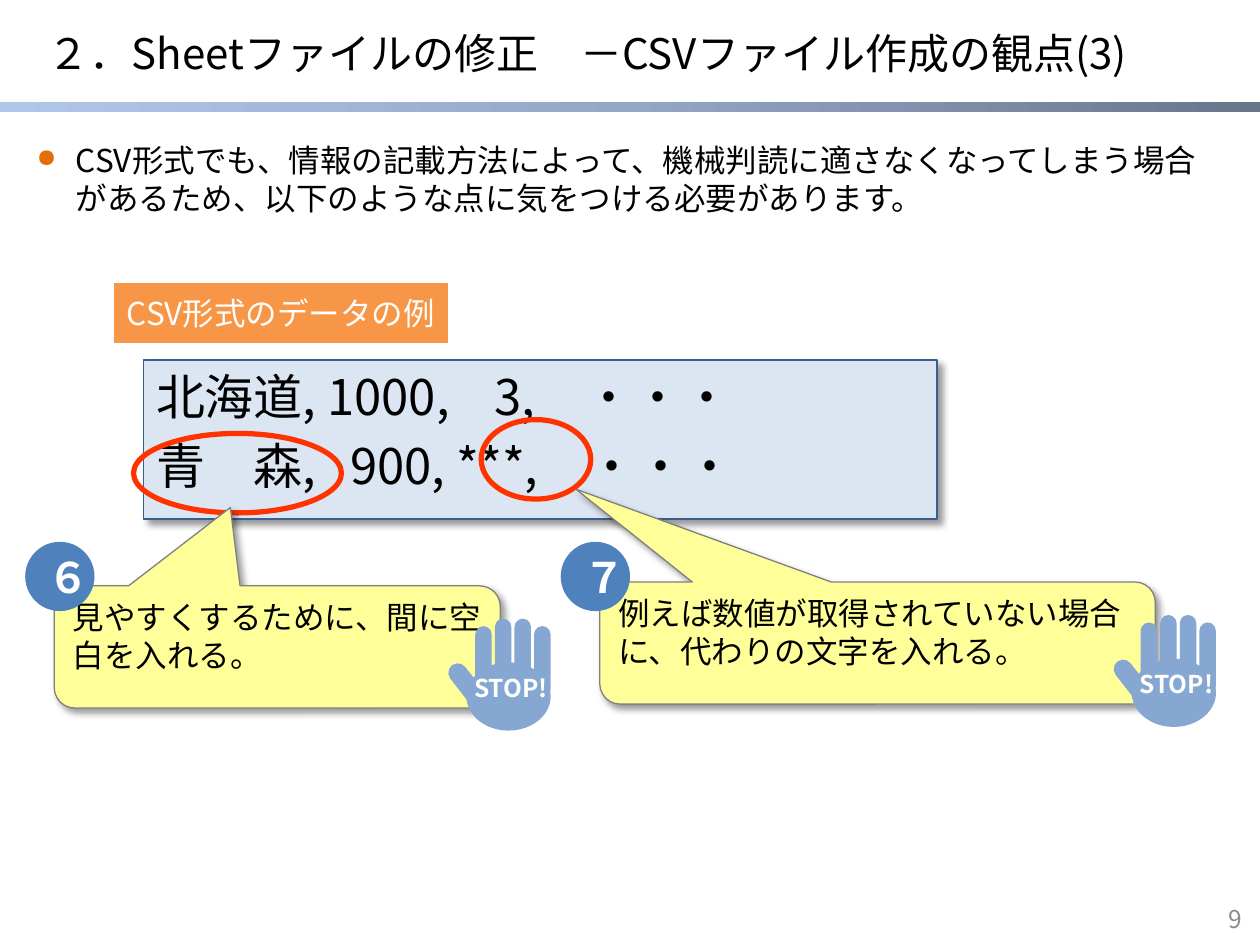
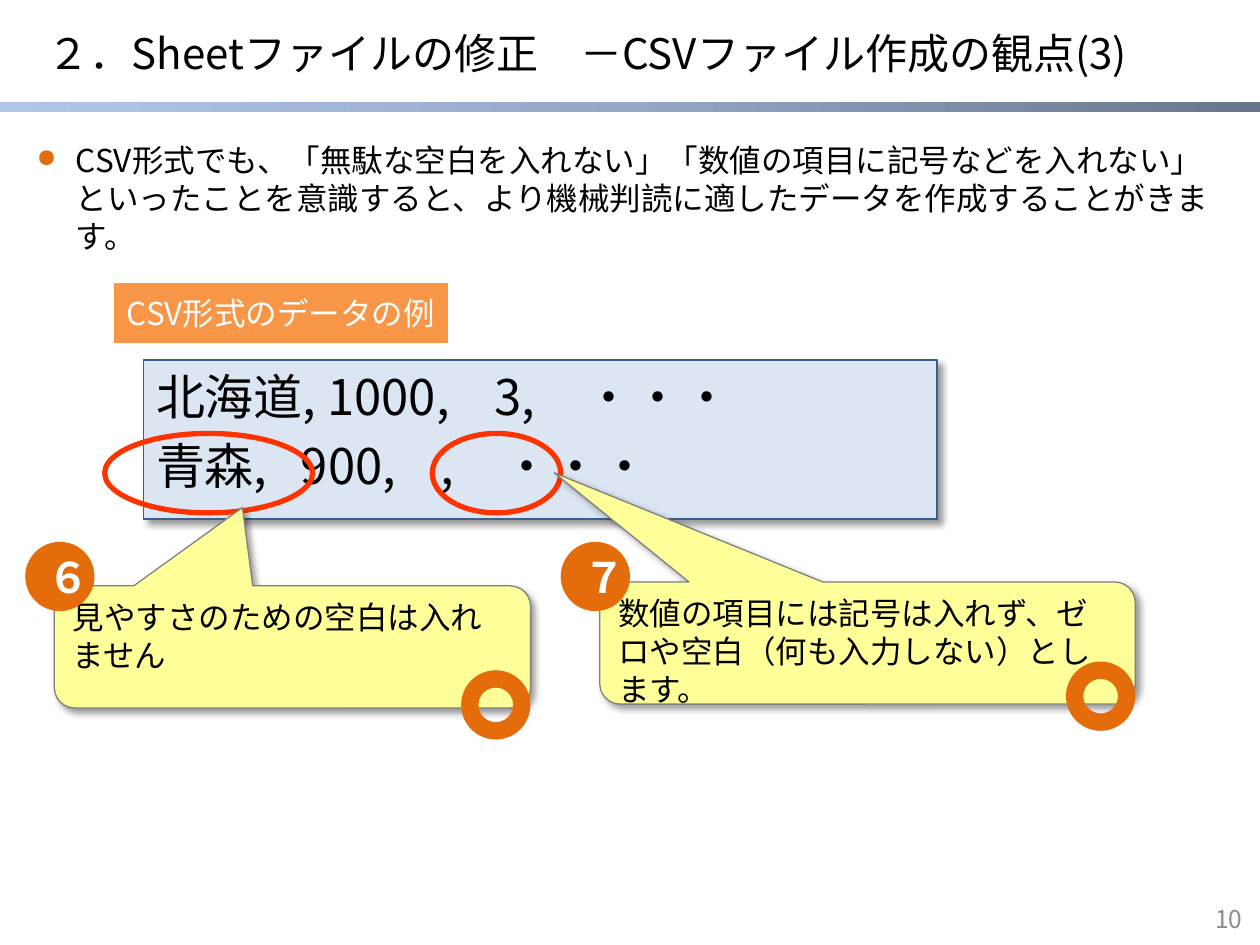
from lxml import etree
from pptx import Presentation
from pptx.dml.color import RGBColor
from pptx.enum import shapes as es, text as et
from pptx.oxml import ns
from pptx.util import Pt

FONT = "Noto Sans CJK JP"
KIND = es.MSO_SHAPE
ALIGN = et.PP_ALIGN
MIDDLE = et.MSO_ANCHOR.MIDDLE
TOP = et.MSO_ANCHOR.TOP
BLACK, WHITE, GREY = "000000", "FFFFFF", "8C8C8C"
ORANGE, BLUE, PALM = "E46C0A", "4F81BD", "85A7D1"
BAND = [("69758B", 0), ("95A7C6", 50), ("B1C6EB", 100)]
TITLE = "２．Sheetファイルの修正　－CSVファイル作成の観点(3)"
LABEL = "CSV形式のデータの例"
FIRST = ("北海道, 1000,\t3,　・・・", [193.5])
BADGES = [("６", 14.4), ("７", 320.4)]

SLIDES = [
    {
        "page": "9",
        "lead": "CSV形式でも、情報の記載方法によって、機械判読に適さなくなってしまう場合があるため、以下のような点に気をつける必要があります。",
        "lead_width": 686,
        "second": ("青　森,\t900, ***,　・・・", [111]),
        "rings": [(76.3, 247.7, 118.8, 45.4), (275, 239.8, 62.6, 45.4)],
        "notes": [
            ("見やすくするために、間に空白を入れる。",
             (31, 334.8, 254.9, 69.8), (-0.105, -1.142)),
            ("例えば数値が取得されていない場合に、代わりの文字を入れる。",
             (342.7, 332.6, 317.5, 69.8), (-0.543, -1.26)),
        ],
        "badge": BLUE,
        "hands": [(263.5, 353.5), (643.7, 351.4)],
        "donuts": [],
    },
    {
        "page": "10",
        "lead": "CSV形式でも、「無駄な空白を入れない」「数値の項目に記号などを入れない」 といったことを意識すると、より機械判読に適したデータを作成することがきます。",
        "lead_width": 697.7,
        "second": ("青森,\t900,\t,　・・・", [82.8, 162.5]),
        "rings": [(59.8, 247.7, 118.8, 45.4), (247, 247.7, 73.4, 45.4)],
        "notes": [
            ("見やすさのための空白は入れません",
             (31, 334.8, 272.2, 69.8), (-0.105, -1.142)),
            ("数値の項目には記号は入れず、ゼロや空白（何も入力しない）とします。",
             (342.7, 332.6, 306, 69.8), (-0.585, -1.394)),
        ],
        "badge": ORANGE,
        "hands": [],
        "donuts": [(263.5, 383), (609.1, 378)],
    },
]


def color(code):
    """Turn a hex string into a colour."""
    return RGBColor.from_string(code)


def node(parent, tag, **attrs):
    """Append a drawing element to a parent."""
    return etree.SubElement(parent, ns.qn("a:" + tag), attrs)


def shape(home, kind, box, fill=None, line=None, width=1):
    """Add a flat preset shape."""
    item = home.shapes.add_shape(kind, *map(Pt, box))
    item.shadow.inherit = False
    if fill:
        item.fill.solid()
        item.fill.fore_color.rgb = color(fill)
    else:
        item.fill.background()
    if line:
        item.line.color.rgb = color(line)
        item.line.width = Pt(width)
    else:
        item.line.fill.background()
    return item


def shade(item):
    """Give a shape a soft shadow to the lower right."""
    effect = item._element.spPr.find(ns.qn("a:effectLst"))
    outer = node(effect, "outerShdw", blurRad=str(Pt(4)), dist=str(Pt(3)),
                 dir="2700000", algn="tl", rotWithShape="0")
    node(node(outer, "srgbClr", val=BLACK), "alpha", val="40000")


def write(item, words, size, ink=BLACK, align=ALIGN.LEFT, anchor=TOP,
          bold=False, wrap=True):
    """Set and format the text of a shape."""
    frame = item.text_frame
    frame.text = words
    frame.word_wrap = wrap
    frame.vertical_anchor = anchor
    for para in frame.paragraphs:
        para.alignment = align
        for run in para.runs:
            run.font.size = Pt(size)
            run.font.bold = bold
            run.font.color.rgb = color(ink)
            run.font.name = FONT
            node(run._r.get_or_add_rPr(), "ea", typeface=FONT)
    return frame


def label(home, box, words, size, **style):
    """Add a text box."""
    return write(home.shapes.add_textbox(*map(Pt, box)), words, size, **style)


def band(slide):
    """Draw the gradient rule under the title."""
    bar = shape(slide, KIND.RECTANGLE, (0, 58.3, 720, 5.8), BLUE)
    bar.fill.gradient()
    bar.fill.gradient_angle = 180
    stops = bar._element.spPr.find(".//" + ns.qn("a:gsLst"))
    for old in list(stops):
        stops.remove(old)
    for code, place in BAND:
        node(node(stops, "gs", pos=str(place * 1000)), "srgbClr", val=code)


def base(slide, page):
    """Draw the band, title and page number."""
    band(slide)
    frame = label(slide, (20.2, 15.1, 680.4, 33.1), TITLE, 24, anchor=MIDDLE)
    frame.paragraphs[0].line_spacing = 0.9
    label(slide, (677.5, 514.1, 39.6, 22.3), page, 14, ink=GREY,
          align=ALIGN.RIGHT, anchor=MIDDLE)


def lead(slide, words, width):
    """Add the bulleted opening statement."""
    frame = label(slide, (14.4, 77, width, 51.1), words, 18)
    frame.margin_left = frame.margin_right = Pt(6.5)
    para = frame.paragraphs[0]
    para.space_before = Pt(6)
    props = para._p.get_or_add_pPr()
    props.set("marL", str(Pt(22.5)))
    props.set("indent", str(Pt(-22.5)))
    node(node(props, "buClr"), "srgbClr", val=ORANGE)
    node(props, "buSzPct", val="80000")
    node(props, "buChar", char="●")


def sample(slide, rows):
    """Draw the data panel with its tab stops."""
    panel = shape(slide, KIND.RECTANGLE, (82.1, 205.9, 453.6, 90.7),
                  "DCE6F2", "3A5F8C")
    shade(panel)
    frame = write(panel, "\n".join(words for words, _ in rows), 28, wrap=False)
    for para, (_, stops) in zip(frame.paragraphs, rows):
        para.space_before = Pt(6)
        tabs = node(para._p.get_or_add_pPr(), "tabLst")
        for stop in stops:
            node(tabs, "tab", pos=str(Pt(stop)), algn="l")


def note(slide, words, box, tip):
    """Draw a yellow callout pointing at its tip."""
    item = shape(slide, KIND.ROUNDED_RECTANGULAR_CALLOUT, box,
                 "FFFF99", "808080", 0.75)
    for slot, value in enumerate((*tip, 0.167)):
        item.adjustments[slot] = value
    shade(item)
    write(item, words, 18)


def digit(home, box, turn=0):
    """Draw one finger as a rounded bar."""
    item = shape(home, KIND.ROUNDED_RECTANGLE, box, PALM)
    item.adjustments[0] = 0.5
    item.rotation = turn


def hand(slide, left, top):
    """Draw a grouped stop hand."""
    group = slide.shapes.add_group_shape()
    shape(group, KIND.OVAL, (left + 3, top + 25, 48.2, 39), PALM)
    for slot, (drop, tall) in enumerate(
            [(4.3, 34.6), (0, 34.6), (0, 34.6), (4.3, 41)]):
        digit(group, (left + 8.1 + 11.2 * slot, top + drop, 9.4, tall))
    digit(group, (left, top + 23, 10.8, 34.6), 322.1)
    frame = label(group, (left + 5.8, top + 28.1, 45.4, 22.3), "STOP!", 14,
                  ink=WHITE, align=ALIGN.CENTER, anchor=MIDDLE, bold=True,
                  wrap=False)
    frame.margin_left = frame.margin_right = 0


def badge(slide, words, left, fill):
    """Draw a numbered disc."""
    disc = shape(slide, KIND.OVAL, (left, 309.6, 39.6, 39.6), fill)
    write(disc, words, 24, WHITE, ALIGN.CENTER, MIDDLE, bold=True)


def build(slide, data):
    """Draw one slide from its data."""
    base(slide, data["page"])
    sample(slide, [FIRST, data["second"]])
    for box in data["rings"]:
        shape(slide, KIND.OVAL, box, line="FF3300", width=3)
    for words, box, tip in data["notes"]:
        note(slide, words, box, tip)
    tag = shape(slide, KIND.RECTANGLE, (65.5, 162, 190.1, 33.8),
                "F79646", "F79646")
    write(tag, LABEL, 18, WHITE, ALIGN.CENTER, MIDDLE, wrap=False)
    for spot in data["hands"]:
        hand(slide, *spot)
    for words, left in BADGES:
        badge(slide, words, left, data["badge"])
    for spot in data["donuts"]:
        shape(slide, KIND.DONUT, (*spot, 39.6, 39.6), ORANGE)
    lead(slide, data["lead"], data["lead_width"])


def main():
    """Build and save the deck."""
    deck = Presentation()
    deck.slide_width, deck.slide_height = Pt(720), Pt(540)
    for data in SLIDES:
        build(deck.slides.add_slide(deck.slide_layouts[6]), data)
    deck.save("out.pptx")


if __name__ == "__main__":
    main()
